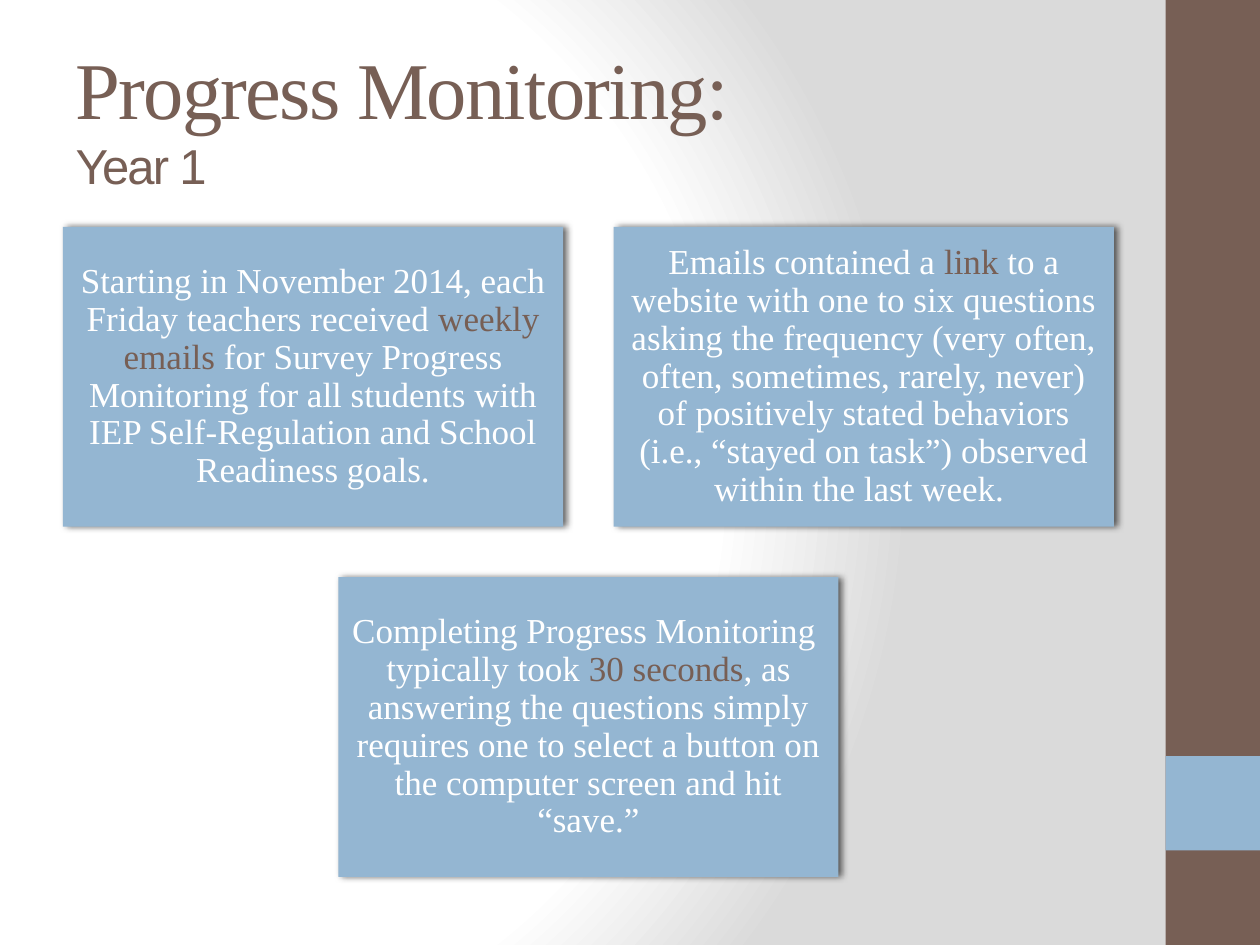
from lxml import etree
from pptx import Presentation
from pptx.dml.color import RGBColor
from pptx.enum.shapes import MSO_SHAPE
from pptx.enum.text import MSO_ANCHOR, MSO_AUTO_SIZE, PP_ALIGN
from pptx.oxml import parse_xml
from pptx.util import Inches, Pt

RECT = MSO_SHAPE.RECTANGLE
MIDDLE = MSO_ANCHOR.MIDDLE
FIXED = MSO_AUTO_SIZE.NONE
LEFT, CENTER = PP_ALIGN.LEFT, PP_ALIGN.CENTER

HUES = {"brown": "775F55", "blue": "94B6D2", "white": "FFFFFF",
        "gray": "DADADA", "black": "000000"}
SERIF, SANS = "Times New Roman", "Arial"
TITLE = [("Progress Monitoring:", 46, SERIF), ("Year 1", 28, SANS)]
BARS = [(0, 7.5, "brown"), (6, 0.75, "blue")]
CARDS = [
    [("Starting in November 2014, each Friday teachers received ", "white"),
     ("weekly emails ", "brown"),
     ("for Survey Progress Monitoring for all students with IEP "
      "Self-Regulation and School Readiness goals.", "white")],
    [("Emails contained a ", "white"),
     ("link", "brown"),
     (" to a website with one to six questions asking the frequency "
      "(very often, often, sometimes, rarely, never) of positively stated "
      "behaviors (i.e., “stayed on task”) observed within the last week. ",
      "white")],
    [("Completing Progress Monitoring  typically took ", "white"),
     ("30 seconds", "brown"),
     (", as answering the questions simply requires one to select a button "
      "on the computer screen and hit “save.”", "white")],
]
WIDE, HIGH, GAP = 3.97, 2.38, 0.4
START, TOP, COLS = 0.5, 1.8, 2
DML = "http://schemas.openxmlformats.org/drawingml/2006/main"
PML = "http://schemas.openxmlformats.org/presentationml/2006/main"


def paint_back(slide):
    stops = "".join(
        f'<a:gs pos="{pos * 1000}"><a:srgbClr val="{HUES[hue]}"/></a:gs>'
        for pos, hue in [(0, "white"), (75, "white"), (100, "gray")])
    back = parse_xml(
        f'<p:bg xmlns:p="{PML}" xmlns:a="{DML}"><p:bgPr>'
        f'<a:gradFill rotWithShape="1"><a:gsLst>{stops}</a:gsLst>'
        '<a:path path="circle"><a:fillToRect l="20000" t="50000" '
        'r="100000" b="50000"/></a:path></a:gradFill>'
        '<a:effectLst/></p:bgPr></p:bg>')
    slide.element.cSld.insert(0, back)


def add_box(slide, x, y, w, h, hue):
    box = slide.shapes.add_shape(RECT, *map(Inches, (x, y, w, h)))
    box.fill.solid()
    box.fill.fore_color.rgb = RGBColor.from_string(HUES[hue])
    box.line.fill.background()
    box.shadow.inherit = False
    return box


def add_run(para, text, size, face, hue):
    run = para.add_run()
    run.text = text
    run.font.size = Pt(size)
    run.font.name = face
    run.font.color.rgb = RGBColor.from_string(HUES[hue])
    return run


def add_shade(box):
    glow = box.element.spPr.find(f"{{{DML}}}effectLst")
    shade = etree.SubElement(
        glow, f"{{{DML}}}outerShdw", blurRad=str(Pt(4)), dist=str(Pt(2)),
        dir="0", algn="ctr", rotWithShape="0")
    tint = etree.SubElement(shade, f"{{{DML}}}srgbClr", val=HUES["black"])
    etree.SubElement(tint, f"{{{DML}}}alpha", val="60000")


def add_title(slide):
    head = slide.shapes.title
    head.left, head.top, head.width, head.height = map(
        Inches, (0.5, 0.3, 8.33, 1.25))
    frame = head.text_frame
    frame.auto_size = FIXED
    frame.word_wrap = True
    frame.vertical_anchor = MIDDLE
    para = frame.paragraphs[0]
    para.alignment = LEFT
    for i, (text, size, face) in enumerate(TITLE):
        if i:
            para.add_line_break()
        run = add_run(para, text, size, face, "brown")
        run.font._element.set("spc", "-100")


def add_card(slide, i, runs):
    row, col = divmod(i, COLS)
    count = min(COLS, len(CARDS) - row * COLS)
    step = WIDE + GAP
    x = START + (COLS - count) * step / 2 + col * step
    box = add_box(slide, x, TOP + row * (HIGH + GAP), WIDE, HIGH, "blue")
    add_shade(box)
    frame = box.text_frame
    frame.word_wrap = True
    frame.vertical_anchor = MIDDLE
    frame.margin_left = frame.margin_right = Inches(0.08)
    frame.margin_top = frame.margin_bottom = Inches(0.08)
    para = frame.paragraphs[0]
    para.alignment = CENTER
    para.line_spacing = 0.9
    for text, hue in runs:
        add_run(para, text, 20, SERIF, hue)


def main():
    """Build the progress monitoring slide."""
    deck = Presentation()
    deck.slide_width, deck.slide_height = Inches(10), Inches(7.5)
    slide = deck.slides.add_slide(deck.slide_layouts[5])
    paint_back(slide)
    for y, h, hue in BARS:
        add_box(slide, 9.25, y, 0.75, h, hue)
    add_title(slide)
    for i, runs in enumerate(CARDS):
        add_card(slide, i, runs)
    deck.save("out.pptx")


if __name__ == "__main__":
    main()
